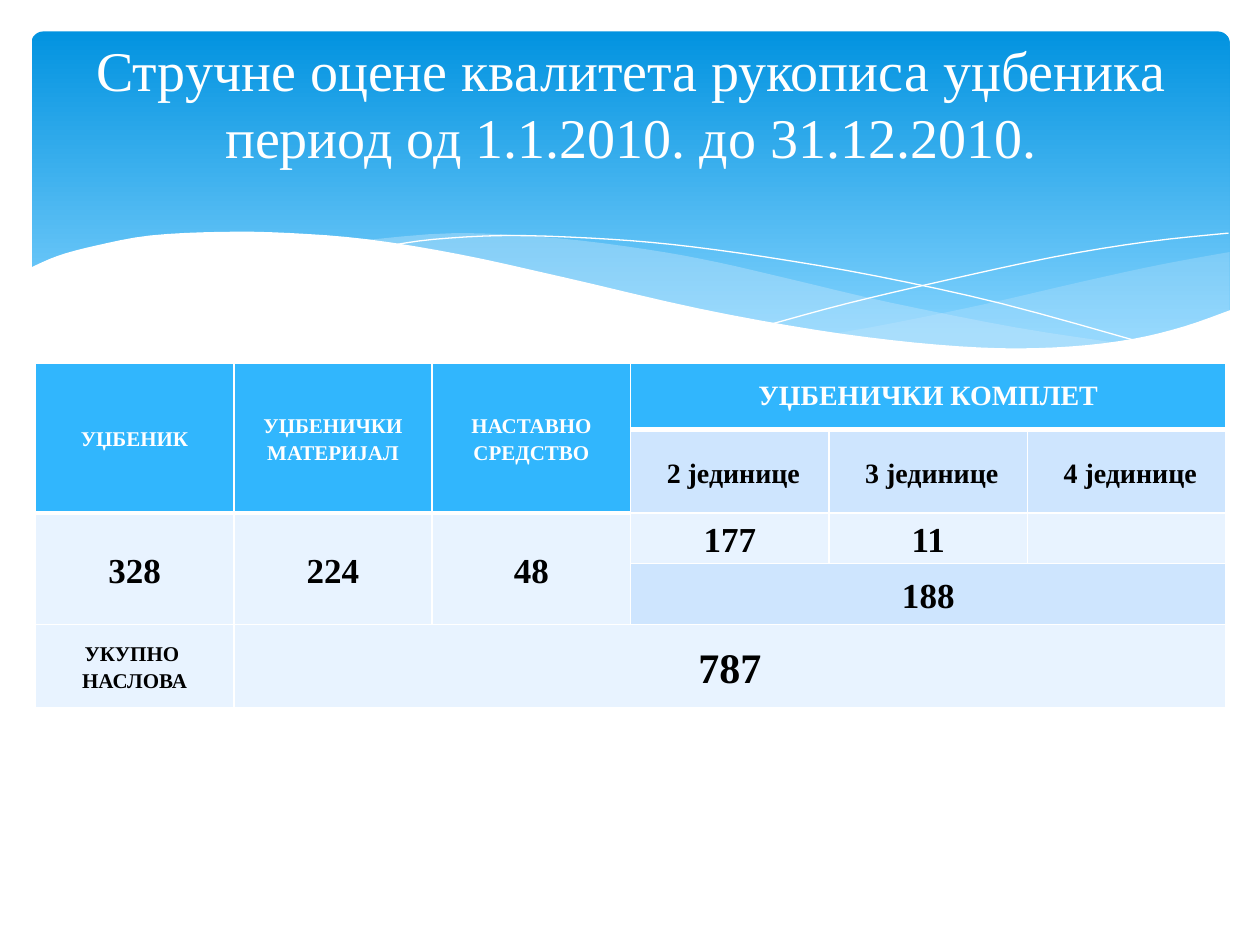
from dataclasses import dataclass

from lxml import etree
from pptx import Presentation
from pptx import util as u
from pptx.dml import color as c
from pptx.enum import shapes, text
from pptx.oxml import ns


@dataclass(frozen=True)
class Theme:
    """Colours, type sizes and the typeface of the page."""
    font: str = "Times New Roman"
    white: str = "FFFFFF"
    black: str = "000000"
    sky_top: str = "0293E0"
    sky_bottom: str = "83D3FE"
    mist: str = "C6E7FC"
    header: str = "31B6FD"
    band: str = "CEE5FE"
    pale: str = "E8F3FF"
    title: int = 32
    total: int = 24
    number: int = 20
    unit: int = 16
    label: int = 12


THEME = Theme()

RIGHT_SWELL = [
    [(702.7, 144), (663.1, 151.2), (619.9, 160.6), (560.9, 174.2),
     (508.3, 185), (475.9, 190.8)],
    [(475.9, 190.8), (507.6, 195.1), (545, 198.7), (586.1, 200.2),
     (627.8, 197.3), (663.1, 190.8), (683.3, 185), (702.7, 177.8)],
]
MIDDLE_SWELL = [
    [(643, 196.6), (581, 187.2), (508.3, 172.8), (452.9, 159.8), (409.7, 149.8),
     (370.1, 142.6), (318.2, 136.1), (259.9, 133.2), (205.9, 137.5)],
    [(205.9, 137.5), (246.2, 143.3), (290.9, 151.9), (323.3, 159.8), (381.6, 172.8),
     (445, 185.8), (500.4, 194.4), (547.9, 199.4), (596.2, 200.2), (643, 196.6)],
]
FALLING_LINE = [
    [(222.5, 140.4), (247.7, 136.8), (288.7, 134.6), (337.7, 136.1), (383.8, 139.7),
     (437.8, 146.9), (500.4, 157.7), (572.4, 173.5), (653, 195.8)],
]
RISING_LINE = [
    [(441.4, 185), (483.8, 173.5), (538.6, 160.6), (601.9, 146.9),
     (655.2, 138.2), (702, 133.2)],
]
FRONT_WAVE = [
    [(703.4, 177.1), (676.8, 186.5), (647.3, 193.7), (612, 198), (571, 199),
     (522.7, 195.8), (466.6, 188.6), (399.6, 176.4), (321.8, 158.4),
     (262.8, 145.4), (210.2, 136.8), (165.6, 133.2), (127.4, 132.5),
     (85.7, 134.6), (54.7, 140.4), (33.1, 146.2), (16.6, 153.4)],
    [(16.6, 236.9), (703.4, 236.9)],
]


def rgb(value):
    """Turn a hex string into a colour."""
    return c.RGBColor.from_string(value)


def smooth_curve(knots, steps=4):
    """Return points on a Catmull-Rom curve through the knots."""
    if len(knots) < 3:
        return knots
    padded = [knots[0], *knots, knots[-1]]
    points = [knots[0]]
    for before, start, end, after in zip(padded, padded[1:], padded[2:], padded[3:]):
        for step in range(1, steps + 1):
            t = step / steps
            points.append(tuple(
                (2 * q + (r - p) * t + (2 * p - 5 * q + 4 * r - s) * t ** 2
                 + (3 * q - p - 3 * r + s) * t ** 3) / 2
                for p, q, r, s in zip(before, start, end, after)))
    return points


def add_wave(page, curves, fill=None, alpha=None, line=None):
    """Draw a filled wave, or an open hairline if no fill is given."""
    points = [(u.Pt(x), u.Pt(y)) for knots in curves for x, y in smooth_curve(knots)]
    builder = page.shapes.build_freeform(*points[0])
    builder.add_line_segments(points[1:], close=fill is not None)
    wave = builder.convert_to_shape()
    wave.shadow.inherit = False
    if fill:
        wave.fill.solid()
        wave.fill.fore_color.rgb = rgb(fill)
    else:
        wave.fill.background()
    if alpha:
        tint = wave.element.spPr.find(".//" + ns.qn("a:srgbClr"))
        etree.SubElement(tint, ns.qn("a:alpha"), val=str(alpha * 1000))
    if line:
        wave.line.color.rgb = rgb(line)
        wave.line.width = u.Pt(0)
    else:
        wave.line.fill.background()


def add_sky(page):
    """Draw the rounded gradient panel behind the title."""
    sky = page.shapes.add_shape(shapes.MSO_SHAPE.ROUNDED_RECTANGLE,
                                u.Pt(18), u.Pt(18), u.Pt(684.7), u.Pt(194.4))
    sky.adjustments[0] = 0.034
    sky.shadow.inherit = False
    sky.line.fill.background()
    sky.fill.gradient()
    sky.fill.gradient_angle = 270
    stops = sky.fill.gradient_stops
    for stop, place, colour in zip(stops, (0, 0.9), (THEME.sky_top, THEME.sky_bottom)):
        stop.position = place
        stop.color.rgb = rgb(colour)


def write(frame, content, size, color, bold=False, spacing=None):
    """Put centred text in a frame, one paragraph for each line."""
    for index, line in enumerate(content.split("\n")):
        para = frame.add_paragraph() if index else frame.paragraphs[0]
        para.text = line
        para.alignment = text.PP_ALIGN.CENTER
        if spacing:
            para.line_spacing = spacing
        for span in para.runs:
            span.font.name = THEME.font
            span.font.size = u.Pt(size)
            span.font.bold = bold
            span.font.color.rgb = rgb(color)


def add_title(page):
    """Add the two-line title, raised by its bottom inset."""
    box = page.shapes.add_textbox(u.Pt(36.7), u.Pt(37.4), u.Pt(648), u.Pt(79.2))
    frame = box.text_frame
    frame.word_wrap = True
    frame.vertical_anchor = text.MSO_ANCHOR.MIDDLE
    frame.margin_bottom = u.Pt(40.4)
    write(frame, "Стручне оцене квалитета рукописа уџбеника\v"
                 "период од 1.1.2010. до 31.12.2010.", THEME.title, THEME.white)


def set_borders(cell, **widths):
    """Give a cell white borders, keyed by side letter."""
    props = cell._tc.get_or_add_tcPr()
    for side, width in widths.items():
        border = etree.SubElement(props, ns.qn("a:ln" + side), w=str(u.Pt(width)))
        fill = etree.SubElement(border, ns.qn("a:solidFill"))
        etree.SubElement(fill, ns.qn("a:srgbClr"), val=THEME.white)


def fill_cell(table, row, col, content, fill, size, rows=1, cols=1, tight=True, spacing=1.15):
    """Merge, border, fill and write one block of cells."""
    head = fill == THEME.header
    cell = table.cell(row, col)
    if rows * cols > 1:
        cell.merge(table.cell(row + rows - 1, col + cols - 1))
    for r in range(row, row + rows):
        for k in range(col, col + cols):
            part = table.cell(r, k)
            sides = {"L": 1, "R": 1, "T": 1, "B": 3} if head else {"L": 1, "R": 1, "B": 1}
            set_borders(part, **sides)
            part.fill.solid()
            part.fill.fore_color.rgb = rgb(fill)
    if not content:
        return
    cell.vertical_anchor = text.MSO_ANCHOR.MIDDLE
    if tight:
        cell.margin_left = cell.margin_right = u.Pt(5)
        cell.margin_top = cell.margin_bottom = u.Pt(0)
    write(cell.text_frame, content, size, THEME.white if head else THEME.black,
          bold=True, spacing=spacing)


def add_counts(page):
    """Add the table of reviewed titles."""
    heights = (38.2, 47.5, 23.8, 24.5, 47.5)
    table = page.shapes.add_table(5, 6, u.Pt(20.2), u.Pt(207.4),
                                  u.Pt(680.4), u.Pt(sum(heights))).table
    table.first_row = table.horz_banding = False
    for column in table.columns:
        column.width = u.Pt(113.4)
    for row, height in zip(table.rows, heights):
        row.height = u.Pt(height)
    kinds = [("УЏБЕНИК", "328"), ("УЏБЕНИЧКИ МАТЕРИЈАЛ", "224"), ("НАСТАВНО СРЕДСТВО", "48")]
    for col, (kind, count) in enumerate(kinds):
        fill_cell(table, 0, col, kind, THEME.header, THEME.label, rows=2)
        fill_cell(table, 2, col, count, THEME.pale, THEME.number, rows=2)
    fill_cell(table, 0, 3, "УЏБЕНИЧКИ КОМПЛЕТ", THEME.header, THEME.unit,
              cols=3, tight=False, spacing=None)
    for col, (units, count) in enumerate([(2, "177"), (3, "11"), (4, "")], start=3):
        fill_cell(table, 1, col, f" {units} јединице", THEME.band, THEME.unit)
        fill_cell(table, 2, col, count, THEME.pale, THEME.number)
    fill_cell(table, 3, 3, "188", THEME.band, THEME.number, cols=3, tight=False)
    fill_cell(table, 4, 0, "УКУПНО \nНАСЛОВА", THEME.pale, THEME.label, tight=False)
    fill_cell(table, 4, 1, "787", THEME.pale, THEME.total, cols=5, tight=False)


def main():
    """Build the page and save the deck."""
    deck = Presentation()
    deck.slide_width, deck.slide_height = u.Pt(720), u.Pt(540)
    page = deck.slides.add_slide(deck.slide_layouts[6])
    add_sky(page)
    add_wave(page, RIGHT_SWELL, fill=THEME.mist, alpha=29)
    add_wave(page, MIDDLE_SWELL, fill=THEME.mist, alpha=40)
    add_wave(page, FALLING_LINE, line=THEME.white)
    add_wave(page, RISING_LINE, line=THEME.white)
    add_wave(page, FRONT_WAVE, fill=THEME.white)
    add_title(page)
    add_counts(page)
    deck.save("out.pptx")


if __name__ == "__main__":
    main()
